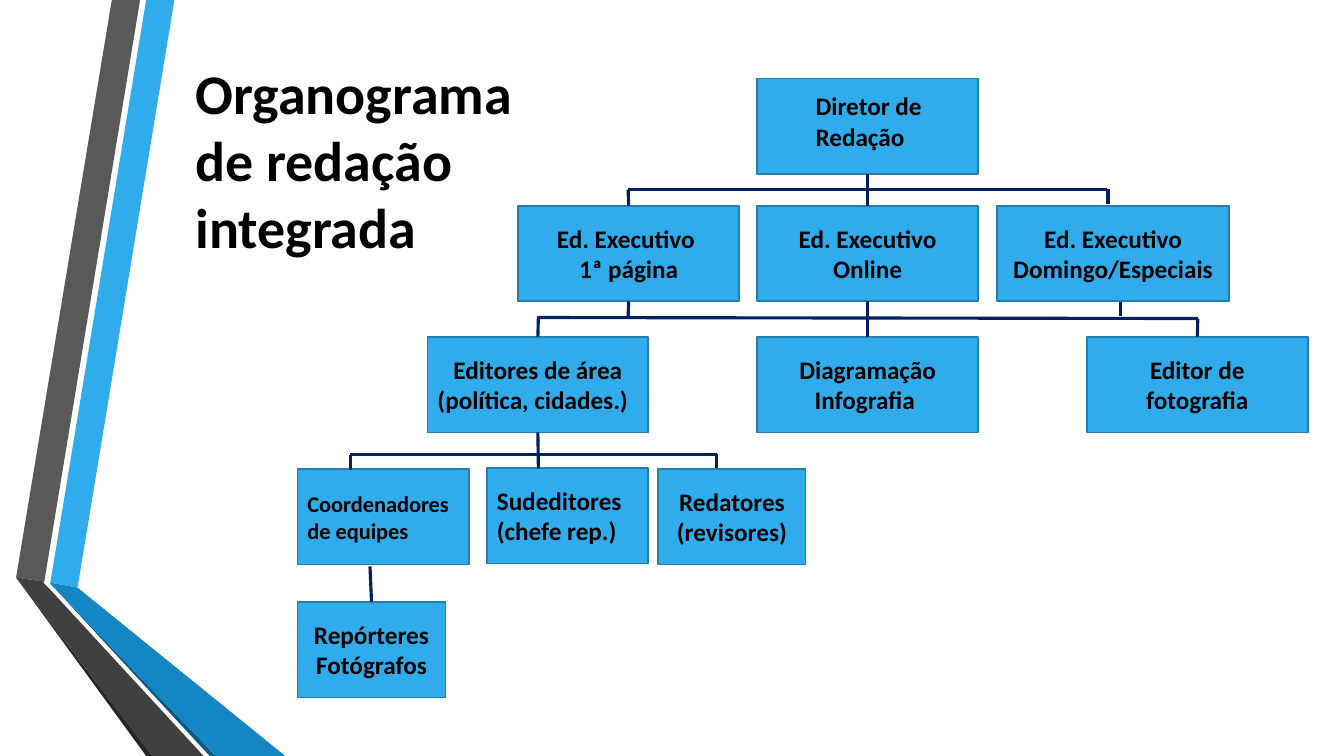
from lxml import etree
from pptx import Presentation
from pptx import util as u
from pptx.dml.color import RGBColor
from pptx.enum import shapes, text
from pptx.oxml.ns import qn

BLUE, EDGE, NAVY, BLACK = "30ACEC", "247FAF", "002060", "000000"
TOP, BOTTOM = 0, 2
BOX_H = 0.95
ALIGN = {"l": text.PP_ALIGN.LEFT, "c": text.PP_ALIGN.CENTER}

RIBBONS = [
    (BLUE, [(0.5, 5.78), (0.77, 5.83), (1.73, 0), (1.45, 0)]),
    ("595959", [(1.39, 0), (1.11, 0), (0.16, 5.73), (0.44, 5.77)]),
    ("262626", [(0.16, 5.73), (1.45, 7.5), (1.51, 7.5)]),
    ("0C5A82", [(0.5, 5.79), (2.08, 7.5), (2.14, 7.5)]),
    ("1287C3", [(0.5, 5.79), (2.14, 7.5), (2.83, 7.5), (0.77, 5.83), (0.5, 5.78)]),
    ("404040", [(2.02, 7.5), (0.48, 5.83), (0.43, 5.78), (0.44, 5.77),
                (0.16, 5.73), (1.51, 7.5)]),
]

# key: left, top, width, lines, alignment of each line, size
BOXES = {
    "diretor": (7.51, 0.78, 2.19, [], "", 18),
    "pagina": (5.14, 2.04, 2.19, ["Ed. Executivo ", "1ª página"], "cc", 18),
    "online": (7.51, 2.04, 2.19, ["Ed. Executivo", "Online"], "cc", 18),
    "domingo": (9.89, 2.04, 2.3, ["Ed. Executivo", "Domingo/Especiais"], "cc", 18),
    "area": (4.24, 3.34, 2.19, ["Editores de área", "(política, cidades.)"], "cl", 18),
    "diagramacao": (7.51, 3.34, 2.19, ["Diagramação", "Infografia "], "cc", 18),
    "fotografia": (10.78, 3.34, 2.19, ["Editor de fotografia"], "c", 18),
    "coordenadores": (2.95, 4.65, 1.7, ["Coordenadores de equipes"], "l", 16),
    "subeditores": (4.83, 4.64, 1.6, ["Sudeditores", "(chefe rep.)"], "ll", 18),
    "redatores": (6.53, 4.65, 1.46, ["Redatores", "(revisores)"], "cc", 18),
    "reporteres": (2.95, 5.97, 1.47, ["Repórteres", "Fotógrafos"], "cc", 18),
}

# x1, y1, x2, y2, then the box and side joined at the start and at the end
LINES = [
    (8.61, 1.72, 8.61, 2.04, ("diretor", BOTTOM), ("online", TOP)),
    (6.23, 1.88, 10.98, 1.88, None, None),
    (6.23, 1.88, 6.23, 2.02, None, ("pagina", TOP)),
    (10.99, 1.88, 10.99, 2.02, None, None),
    (6.23, 3, 6.23, 3.14, ("pagina", BOTTOM), None),
    (8.61, 3, 8.61, 3.32, ("online", BOTTOM), ("diagramacao", TOP)),
    (11.11, 3, 11.11, 3.14, None, None),
    (5.34, 3.15, 11.88, 3.16, None, None),
    (5.34, 3.14, 5.34, 3.34, None, ("area", TOP)),
    (11.88, 3.16, 11.88, 3.34, None, ("fotografia", TOP)),
    (5.32, 4.3, 5.34, 4.65, ("area", BOTTOM), None),
    (3.47, 4.51, 7.11, 4.51, None, None),
    (3.48, 4.51, 3.48, 4.66, None, None),
    (7.11, 4.5, 7.11, 4.64, None, None),
    (3.67, 5.62, 3.68, 5.97, None, ("reporteres", TOP)),
]


def rgb(value):
    return RGBColor.from_string(value)


def set_text(tf, lines, aligns, size, anchor):
    tf.word_wrap = True
    tf.vertical_anchor = anchor
    font = {"name": "Calibri", "size": u.Pt(size), "bold": True}
    for i, (line, align) in enumerate(zip(lines, aligns)):
        p = tf.add_paragraph() if i else tf.paragraphs[0]
        p.alignment = ALIGN[align]
        r = p.add_run()
        r.text = line
        for name, value in font.items():
            setattr(r.font, name, value)
        r.font.color.rgb = rgb(BLACK)


def add_ribbon(s, color, points):
    pts = [(u.Inches(x), u.Inches(y)) for x, y in points]
    fb = s.shapes.build_freeform(*pts[0])
    fb.add_line_segments(pts[1:], close=True)
    sp = fb.convert_to_shape()
    sp.shadow.inherit = False
    sp.fill.solid()
    sp.fill.fore_color.rgb = rgb(color)
    sp.line.fill.background()


def add_box(s, left, top, width, lines, aligns, size):
    sp = s.shapes.add_shape(shapes.MSO_SHAPE.RECTANGLE,
                            *map(u.Inches, (left, top, width, BOX_H)))
    sp.shadow.inherit = False
    sp.fill.solid()
    sp.fill.fore_color.rgb = rgb(BLUE)
    sp.line.color.rgb = rgb(EDGE)
    sp.line.width = u.Pt(1.25)
    set_text(sp.text_frame, lines, aligns, size, text.MSO_ANCHOR.MIDDLE)
    return sp


def add_line(s, boxes, x1, y1, x2, y2, start, end):
    cx = s.shapes.add_connector(shapes.MSO_CONNECTOR.STRAIGHT,
                                *map(u.Inches, (x1, y1, x2, y2)))
    cx.line.color.rgb = rgb(NAVY)
    cx.line.width = u.Pt(2.25)
    etree.SubElement(cx._element.spPr, qn("a:effectLst"))
    for join, connect in ((start, cx.begin_connect), (end, cx.end_connect)):
        if join:
            connect(boxes[join[0]], join[1])


def place_title(s):
    title = s.shapes.title
    place = {"left": 1.84, "top": 0.53, "width": 3.78, "height": 1.83}
    for name, value in place.items():
        setattr(title, name, u.Inches(value))
    tf = title.text_frame
    set_text(tf, ["Organograma de redação integrada"], "l", 40, text.MSO_ANCHOR.TOP)
    tf.auto_size = text.MSO_AUTO_SIZE.NONE


def add_director_label(s):
    tb = s.shapes.add_textbox(*map(u.Inches, (7.99, 0.85, 1.45, 0.71)))
    set_text(tb.text_frame, ["Diretor de Redação"], "l", 18, text.MSO_ANCHOR.TOP)
    tb.text_frame.auto_size = text.MSO_AUTO_SIZE.SHAPE_TO_FIT_TEXT


def main():
    prs = Presentation()
    prs.slide_width, prs.slide_height = u.Inches(13.33), u.Inches(7.5)
    s = prs.slides.add_slide(prs.slide_layouts.get_by_name("Title Only"))
    place_title(s)
    for color, points in RIBBONS:
        add_ribbon(s, color, points)
    boxes = {key: add_box(s, *values) for key, values in BOXES.items()}
    for line in LINES:
        add_line(s, boxes, *line)
    add_director_label(s)
    prs.save("out.pptx")


if __name__ == "__main__":
    main()
